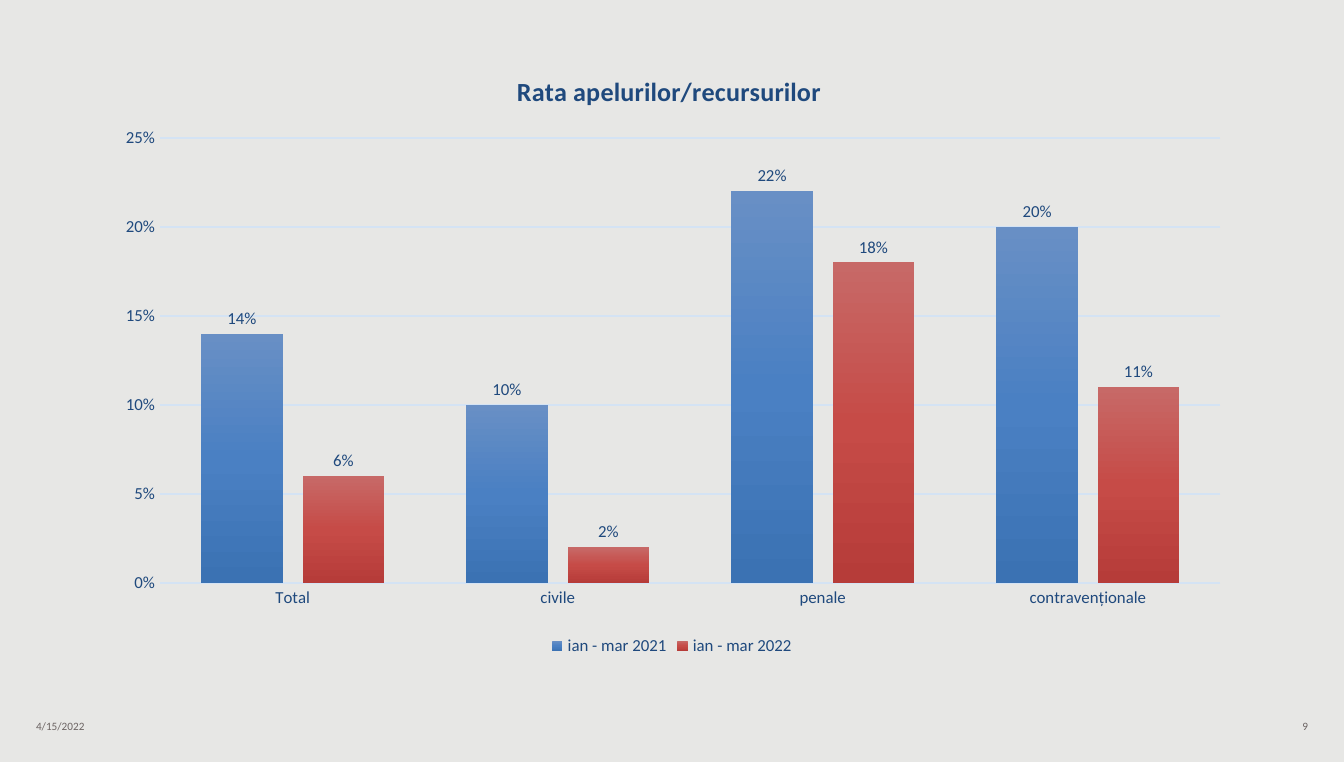
"""Build the slide comparing appeal rates in two quarters."""
from dataclasses import dataclass

from pptx import Presentation
from pptx.chart.data import CategoryChartData
from pptx.dml.color import RGBColor
from pptx.enum.chart import XL_CHART_TYPE as ChartType
from pptx.enum.chart import XL_LABEL_POSITION as LabelPosition
from pptx.enum.chart import XL_LEGEND_POSITION as LegendPosition
from pptx.enum.chart import XL_TICK_MARK as TickMark
from pptx.enum.text import MSO_ANCHOR as Anchor
from pptx.enum.text import PP_ALIGN as Align
from pptx.oxml import parse_xml
from pptx.oxml.ns import nsdecls, qn
from pptx.util import Inches, Pt


@dataclass(frozen=True)
class Theme:
    background: str = "E7E7E5"
    ink: str = "1F497D"
    grid: str = "D4E3F4"
    footer: str = "6C6463"
    font: str = "Calibri"
    title_size: float = 14
    label_size: float = 9
    footer_size: float = 6


@dataclass(frozen=True)
class Period:
    name: str
    rates: tuple[float, ...]
    gradient: tuple[str, str, str]


@dataclass(frozen=True)
class Footer:
    text: str
    left: float
    align: Align


THEME = Theme()
CATEGORIES = ("Total", "civile", "penale", "contravenționale")
PERIODS = (
    Period("ian - mar 2021", (0.14, 0.10, 0.22, 0.20), ("688FC5", "4A80C3", "3B72B3")),
    Period("ian - mar 2022", (0.06, 0.02, 0.18, 0.11), ("C76967", "C64B47", "B63C39")),
)
FOOTERS = (
    Footer("4/15/2022", 0.17, Align.LEFT),
    Footer("9", 7.5, Align.RIGHT),
)


def apply(target: object, values: dict) -> None:
    """Set each named attribute of the target."""
    for name, value in values.items():
        setattr(target, name, value)


def style_font(font, size: float, color: str, bold: bool = False) -> None:
    """Give a font the theme's face with a size, colour and weight."""
    apply(font, {"name": THEME.font, "size": Pt(size), "bold": bold})
    font.color.rgb = RGBColor.from_string(color)


def style_line(line) -> None:
    """Draw a line in the grid colour."""
    line.color.rgb = RGBColor.from_string(THEME.grid)
    line.width = Pt(0.75)


def place(element, index: int, **fractions: float) -> None:
    """Give a chart part a manual layout in fractions of the chart."""
    for old in element.findall(qn("c:layout")):
        element.remove(old)
    target = '<c:layoutTarget val="inner"/>' if "w" in fractions else ""
    modes = '<c:xMode val="edge"/><c:yMode val="edge"/>'
    sides = "".join(f'<c:{side} val="{part}"/>' for side, part in fractions.items())
    element.insert(index, parse_xml(
        f'<c:layout {nsdecls("c")}><c:manualLayout>{target}{modes}{sides}'
        "</c:manualLayout></c:layout>"))


def style_series(series, period: Period) -> None:
    """Fill the bars with a vertical gradient and label them."""
    stops = "".join(
        f'<a:gs pos="{step * 50000}"><a:srgbClr val="{color}"/></a:gs>'
        for step, color in enumerate(period.gradient))
    series.format.line.fill.background()
    series._element.get_or_add_spPr().insert(0, parse_xml(
        f'<a:gradFill {nsdecls("a")} rotWithShape="1"><a:gsLst>{stops}</a:gsLst>'
        '<a:lin ang="5400000" scaled="0"/></a:gradFill>'))
    labels = series.data_labels
    apply(labels, {"show_value": True, "number_format": "0%",
                   "number_format_is_linked": False,
                   "position": LabelPosition.OUTSIDE_END})
    style_font(labels.font, THEME.label_size, THEME.ink)


def add_rate_chart(page) -> None:
    """Add the clustered column chart of rates."""
    data = CategoryChartData(number_format="0%")
    data.categories = CATEGORIES
    for period in PERIODS:
        data.add_series(period.name, period.rates)
    chart = page.shapes.add_chart(
        ChartType.COLUMN_CLUSTERED, Inches(0.75), Inches(0.35),
        Inches(8.5), Inches(4.57), data).chart
    style_font(chart.font, THEME.label_size, THEME.ink)

    para = chart.chart_title.text_frame.paragraphs[0]
    span = para.add_run()
    span.text = "Rata apelurilor/recursurilor"
    style_font(span.font, THEME.title_size, THEME.ink, bold=True)
    place(chart.chart_title._element, 1, x=0.36, y=0.035)

    apply(chart, {"has_legend": True})
    apply(chart.legend, {"position": LegendPosition.BOTTOM, "include_in_layout": False})
    style_font(chart.legend.font, THEME.label_size, THEME.ink)

    for axis in (chart.category_axis, chart.value_axis):
        apply(axis, {"major_tick_mark": TickMark.NONE, "minor_tick_mark": TickMark.NONE})
        style_font(axis.tick_labels.font, THEME.label_size, THEME.ink)
    style_line(chart.category_axis.format.line)
    scale = chart.value_axis
    apply(scale, {"minimum_scale": 0, "maximum_scale": 0.25, "major_unit": 0.05})
    apply(scale.tick_labels, {"number_format": "0%", "number_format_is_linked": False})
    scale.format.line.fill.background()
    style_line(scale.major_gridlines.format.line)

    plot = chart.plots[0]
    apply(plot, {"gap_width": 100, "overlap": -24, "vary_by_categories": False})
    for series, period in zip(plot.series, PERIODS):
        style_series(series, period)
    place(chart._chartSpace.chart.plotArea, 0, x=0.052, y=0.148, w=0.928, h=0.725)


def add_footer(page, footer: Footer) -> None:
    """Add one small text at the foot of the page."""
    box = page.shapes.add_textbox(
        Inches(footer.left), Inches(5.3), Inches(2.33), Inches(0.2))
    apply(box.text_frame, {"word_wrap": True, "vertical_anchor": Anchor.MIDDLE})
    para = box.text_frame.paragraphs[0]
    apply(para, {"alignment": footer.align, "space_after": Pt(6)})
    span = para.add_run()
    span.text = footer.text
    style_font(span.font, THEME.footer_size, THEME.footer)


def main() -> None:
    """Build and save the deck."""
    deck = Presentation()
    apply(deck, {"slide_width": Inches(10), "slide_height": Inches(5.67)})
    page = deck.slides.add_slide(deck.slide_layouts[6])
    page.background.fill.solid()
    page.background.fill.fore_color.rgb = RGBColor.from_string(THEME.background)
    add_rate_chart(page)
    for footer in FOOTERS:
        add_footer(page, footer)
    deck.save("out.pptx")


if __name__ == "__main__":
    main()
